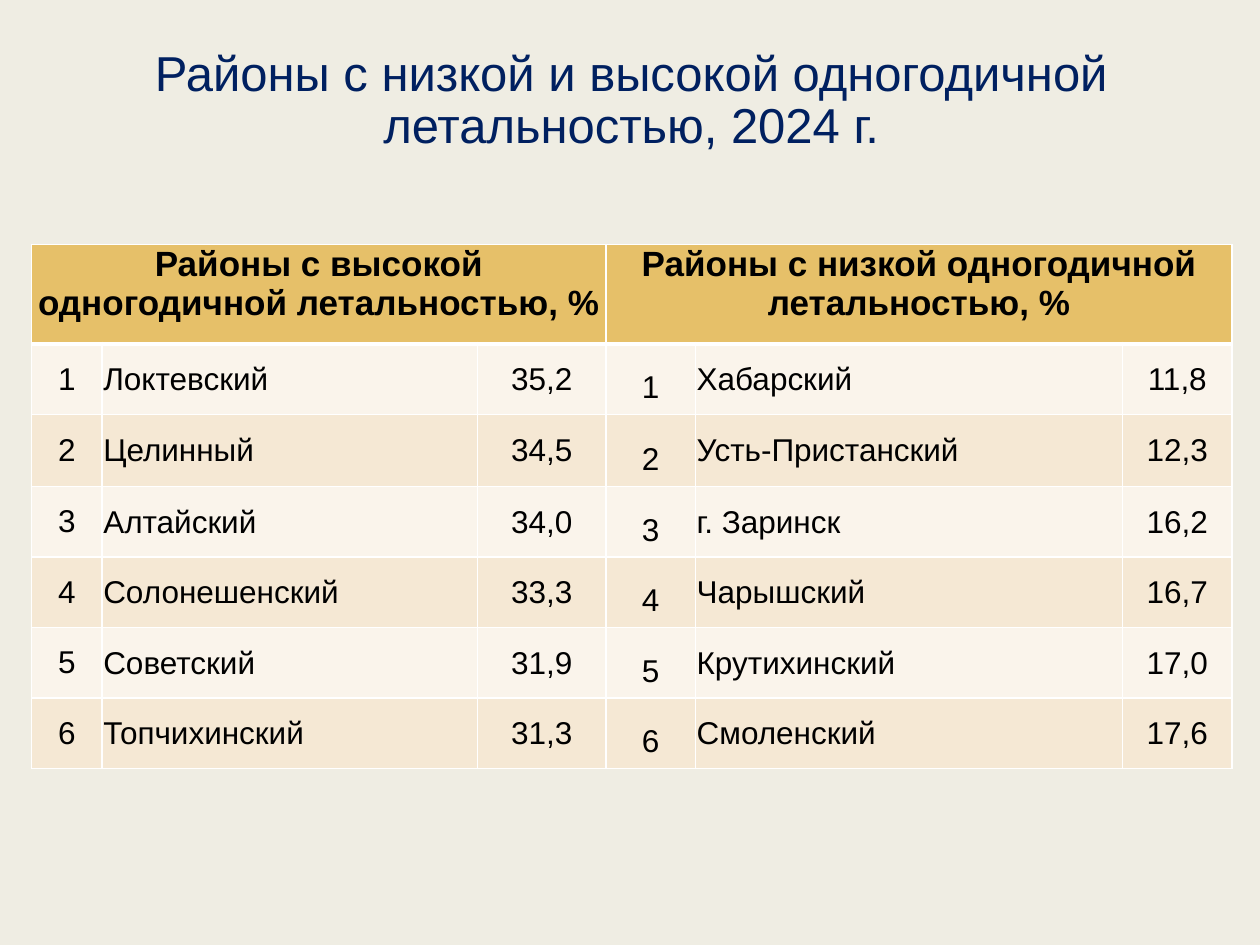
from dataclasses import dataclass

from lxml import etree
from pptx import Presentation
from pptx.dml.color import RGBColor
from pptx.enum.text import MSO_ANCHOR, PP_ALIGN
from pptx.oxml.ns import qn
from pptx.util import Inches, Pt

LEFT, CENTER = PP_ALIGN.LEFT, PP_ALIGN.CENTER
TOP, MIDDLE = MSO_ANCHOR.TOP, MSO_ANCHOR.MIDDLE

PAPER = RGBColor(0xEF, 0xED, 0xE3)
NAVY = RGBColor(0x00, 0x20, 0x60)
BLACK = RGBColor(0x00, 0x00, 0x00)
WHITE = RGBColor(0xFF, 0xFF, 0xFF)
GOLD = RGBColor(0xE6, 0xC0, 0x69)
CREAM = RGBColor(0xFA, 0xF4, 0xEB)
SAND = RGBColor(0xF5, 0xE8, 0xD4)

FONT = "Arial"
WIDTHS = (0.56, 2.98, 1.02, 0.71, 3.39, 0.87)
HEIGHTS = (0.79, 0.56, 0.57, 0.56, 0.56, 0.56, 0.56)


@dataclass(frozen=True)
class Group:
    title: str
    col: int
    inset: float
    space: float
    rows: tuple


GROUPS = (
    Group("Районы с высокой одногодичной летальностью, %", 0, 0.07, 1.0, (
        ("Локтевский", "35,2"),
        ("Целинный", "34,5"),
        ("Алтайский", "34,0"),
        ("Солонешенский", "33,3"),
        ("Советский", "31,9"),
        ("Топчихинский", "31,3"),
    )),
    Group("Районы с низкой одногодичной летальностью, %", 3, 0.04, 1.5, (
        ("Хабарский", "11,8"),
        ("Усть-Пристанский", "12,3"),
        ("г. Заринск", "16,2"),
        ("Чарышский", "16,7"),
        ("Крутихинский", "17,0"),
        ("Смоленский", "17,6"),
    )),
)


def write(frame, text: str, *, size=18, color=BLACK, bold=False,
          align=CENTER, space=1.0) -> None:
    frame.word_wrap = True
    para = frame.paragraphs[0]
    para.alignment = align
    para.line_spacing = space
    run = para.add_run()
    run.text = text
    run.font.name = FONT
    run.font.size = Pt(size)
    run.font.bold = bold
    run.font.color.rgb = color


def edge(cell, side: str, width: float) -> None:
    props = cell._tc.get_or_add_tcPr()
    line = etree.SubElement(props, qn(f"a:ln{side}"), w=str(Pt(width)))
    fill = etree.SubElement(line, qn("a:solidFill"))
    etree.SubElement(fill, qn("a:srgbClr"), val=str(WHITE))


def style(cell, row: int) -> None:
    for side in "LRTB":
        thick = (row, side) in ((0, "B"), (1, "T"))
        edge(cell, side, 3 if thick else 1)
    cell.fill.solid()
    cell.fill.fore_color.rgb = GOLD if row == 0 else CREAM if row % 2 else SAND


def put(cell, text: str, *, inset=0.01, top=0.0, anchor=MIDDLE, **form) -> None:
    cell.margin_left = cell.margin_right = Inches(inset)
    cell.margin_top, cell.margin_bottom = Inches(top), Inches(0)
    cell.vertical_anchor = anchor
    write(cell.text_frame, text, **form)


def draw_group(table, group: Group) -> None:
    col = group.col
    head = table.cell(0, col)
    head.merge(table.cell(0, col + 2))
    put(head, group.title, inset=0.04, anchor=TOP, size=20, bold=True)
    for row, (name, rate) in enumerate(group.rows, 1):
        put(table.cell(row, col), str(row), inset=group.inset, space=group.space)
        put(table.cell(row, col + 1), name, top=0.01, align=LEFT)
        put(table.cell(row, col + 2), rate, top=0.01)


def draw_table(slide) -> None:
    table = slide.shapes.add_table(
        len(HEIGHTS), len(WIDTHS), Inches(0.25), Inches(1.94),
        Inches(sum(WIDTHS)), Inches(sum(HEIGHTS))).table
    for col, width in zip(table.columns, WIDTHS):
        col.width = Inches(width)
    for num, (row, height) in enumerate(zip(table.rows, HEIGHTS)):
        row.height = Inches(height)
        for cell in row.cells:
            style(cell, num)
    for group in GROUPS:
        draw_group(table, group)


def draw_title(slide) -> None:
    box = slide.shapes.add_textbox(Inches(0.51), Inches(0.34), Inches(9), Inches(0.94))
    box.text_frame.vertical_anchor = MIDDLE
    write(box.text_frame, "Районы с низкой и высокой одногодичной летальностью, 2024 г.",
          size=28, color=NAVY, space=0.89)


def main() -> None:
    deck = Presentation()
    deck.slide_width, deck.slide_height = Inches(10), Inches(7.5)
    slide = deck.slides.add_slide(deck.slide_layouts[6])
    slide.background.fill.solid()
    slide.background.fill.fore_color.rgb = PAPER
    draw_title(slide)
    draw_table(slide)
    deck.save("out.pptx")


if __name__ == "__main__":
    main()
